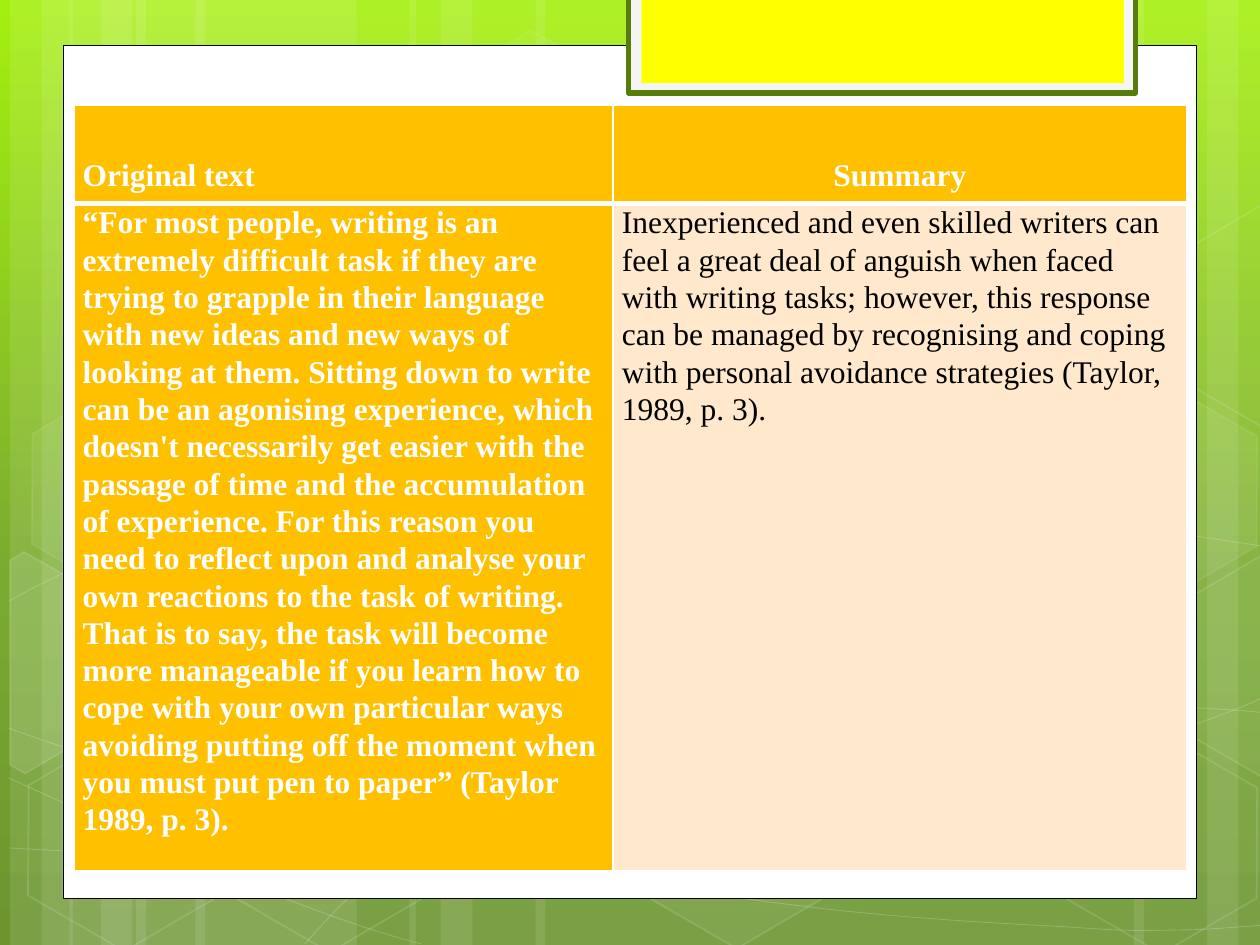
from copy import deepcopy
from lxml import etree
from pptx import Presentation
from pptx.dml.color import RGBColor
from pptx.enum.shapes import MSO_SHAPE
from pptx.enum.text import MSO_ANCHOR, PP_ALIGN
from pptx.oxml.ns import qn
from pptx.util import Cm, Pt

RECT, HEXAGON = MSO_SHAPE.RECTANGLE, MSO_SHAPE.HEXAGON
LEFT, CENTER = PP_ALIGN.LEFT, PP_ALIGN.CENTER
TOP, BOTTOM = MSO_ANCHOR.TOP, MSO_ANCHOR.BOTTOM
WHITE = RGBColor(0xFF, 0xFF, 0xFF)
BLACK = RGBColor(0, 0, 0)
AMBER = RGBColor(0xFF, 0xC0, 0x00)
PEACH = RGBColor(0xFF, 0xE8, 0xCC)
YELLOW = RGBColor(0xFF, 0xFF, 0x00)
PALE = RGBColor(0xF5, 0xF5, 0xF5)
GREEN = RGBColor(0x57, 0x7C, 0x0C)
FONT = "Times New Roman"

BACKGROUND = [(0, RGBColor(0xA5, 0xEF, 0x0E)), (0.62, RGBColor(0x79, 0xAA, 0x30)),
              (1, RGBColor(0x6C, 0x95, 0x30))]

HEADER = ["Original text", "Summary"]
BODY = [
    "“For most people, writing is an extremely difficult task if they are trying to "
    "grapple in their language with new ideas and new ways of looking at them. Sitting "
    "down to write can be an agonising experience, which doesn't necessarily get easier "
    "with the passage of time and the accumulation of experience. For this reason you "
    "need to reflect upon and analyse your own reactions to the task of writing. That is "
    "to say, the task will become more manageable if you learn how to cope with your own "
    "particular ways avoiding putting off the moment when you must put pen to paper” "
    "(Taylor 1989, p. 3).",
    "Inexperienced and even skilled writers can feel a great deal of anguish when faced "
    "with writing tasks; however, this response can be managed by recognising and coping "
    "with personal avoidance strategies (Taylor, 1989, p. 3).",
]
COL_WIDTHS = [4.28, 4.55]
ROW_HEIGHTS = [0.78, 5.3]

STRIPES = [(1.08, 1.75), (0.08, 0.5), (0.33, 0.83), (1.55, 1.75), (0.55, 0.5), (0.8, 0.83),
           (7.33, 1.75), (9.58, 0.5), (9, 0.83), (4.25, 3.08), (3.25, 0.5), (3.5, 0.83)]

CURVES = [
    [(0.07, 6.73), (0.61, 6.76), (1.15, 6.79), (1.9, 6.78), (2.65, 6.77), (3.58, 6.75),
     (4.58, 6.65), (5.58, 6.55), (7, 6.36), (7.92, 6.17), (8.83, 5.98), (9.77, 5.68),
     (10.07, 5.51)],
    [(0.07, 4.77), (0.36, 4.61), (0.65, 4.46), (1.21, 4.31), (1.78, 4.16), (2.59, 3.94),
     (3.47, 3.87), (4.36, 3.8), (5.44, 3.79), (6.54, 3.87), (7.64, 3.95), (9.47, 4.26),
     (10.07, 4.34)],
    [(0.06, 6.17), (1.27, 6.72), (2.47, 7.27), (3.34, 7.49)],
    [(0.07, 5.78), (0.38, 5.89), (0.7, 6), (1.28, 6.16), (1.86, 6.31), (2.73, 6.56),
     (3.57, 6.73), (4.4, 6.9), (5.45, 7.08), (6.28, 7.18), (7.11, 7.29), (8, 7.33),
     (8.53, 7.36), (9.05, 7.4), (9.19, 7.38), (9.45, 7.38), (9.71, 7.37), (9.89, 7.35),
     (10.07, 7.34)],
    [(2.42, 7.49), (2.6, 7.29), (2.78, 7.09), (3.02, 6.91), (3.26, 6.73), (3.6, 6.53),
     (3.88, 6.39), (4.16, 6.25), (4.33, 6.19), (4.7, 6.09), (5.06, 5.99), (5.73, 5.85),
     (6.08, 5.78), (6.44, 5.71), (6.49, 5.71), (6.8, 5.69), (7.11, 5.66), (7.6, 5.63),
     (7.94, 5.62), (8.29, 5.61), (8.86, 5.62), (8.86, 5.62), (9.08, 5.62), (9.31, 5.62),
     (9.53, 5.62), (9.71, 5.63), (9.88, 5.64), (9.97, 5.65), (10.06, 5.66), (10.03, 5.65),
     (10.06, 5.66)],
]

HEXAGONS = [(3.34, 0.36, 4, 8), (4.97, 5.89, 6, 12), (0.11, 5.91, 0, 12),
            (0.14, 3.12, 7, 8), (1.74, 5.92, 0, 12), (7.53, 4.53, 10, 12),
            (8.34, 5.93, 0, 12), (8.34, 3.14, 7, 8)]

CUT_HEXAGONS = [
    (10, [(0.08, 4.45), (0.19, 4.38), (0.96, 4.82), (0.95, 5.7), (0.2, 6.14), (0.08, 6.07)]),
    (4, [(9.26, 4.85), (10.01, 4.41), (10.09, 4.46), (10.09, 6.13), (10.02, 6.17),
         (9.26, 5.73)]),
    (0, [(9.26, 2.07), (10.01, 1.63), (10.1, 1.68), (10.09, 3.35), (10.02, 3.39),
         (9.26, 2.95)]),
]

PANELS = [(0.5, 0.36, 9, 6.77, WHITE, BLACK, 0.5), (4.99, -0.02, 4.02, 0.76, PALE, GREEN, 3),
          (5.09, -0.02, 3.83, 0.68, YELLOW, None, 0)]


def inch(v):
    return Cm(v * 2.54)


def set_alpha(parent, percent):
    if percent < 100:
        color = parent.find(qn("a:solidFill")).find(qn("a:srgbClr"))
        etree.SubElement(color, qn("a:alpha"), val=str(percent * 1000))


def style(sp, fill=None, fill_alpha=100, line=None, width=1, line_alpha=100):
    sp.shadow.inherit = False
    sp_pr = sp._element.spPr
    if fill is None or fill_alpha == 0:
        sp.fill.background()
    else:
        sp.fill.solid()
        sp.fill.fore_color.rgb = fill
        set_alpha(sp_pr, fill_alpha)
    if line is None:
        sp.line.fill.background()
    else:
        sp.line.color.rgb = line
        sp.line.width = Pt(width)
        set_alpha(sp_pr.find(qn("a:ln")), line_alpha)


def add_preset(shapes, kind, x, y, w, h):
    return shapes.add_shape(kind, inch(x), inch(y), inch(w), inch(h))


def add_outline(shapes, points, close):
    pts = [(inch(x), inch(y)) for x, y in points]
    fb = shapes.build_freeform(*pts[0])
    fb.add_line_segments(pts[1:], close=close)
    return fb.convert_to_shape()


def add_curve(shapes, points):
    sp = add_outline(shapes, points, False)
    segments = list(sp._element.iter(qn("a:lnTo")))
    for i in range(0, len(segments), 3):
        curve = etree.Element(qn("a:cubicBezTo"))
        segments[i].addprevious(curve)
        for segment in segments[i:i + 3]:
            curve.append(segment[0])
            segment.getparent().remove(segment)
    return sp


def set_borders(cell, widths):
    tc_pr = cell._tc.get_or_add_tcPr()
    for i, (side, width) in enumerate(zip("LRTB", widths)):
        ln = etree.Element(qn(f"a:ln{side}"), w=str(Pt(width)))
        fill = etree.SubElement(ln, qn("a:solidFill"))
        etree.SubElement(fill, qn("a:srgbClr"), val=str(WHITE))
        tc_pr.insert(i, ln)


def fill_cell(cell, text, fill, color, bold, align, anchor, borders):
    cell.fill.solid()
    cell.fill.fore_color.rgb = fill
    cell.margin_left = cell.margin_right = inch(0.07)
    cell.margin_top = 0
    cell.margin_bottom = inch(0.08) if anchor == BOTTOM else 0
    cell.vertical_anchor = anchor
    set_borders(cell, borders)
    p = cell.text_frame.paragraphs[0]
    p.alignment, p.line_spacing, p.space_after = align, 1.07, Pt(8)
    r = p.add_run()
    r.text = text
    r.font.name, r.font.size, r.font.bold = FONT, Pt(18), bold
    r.font.color.rgb = color


def add_background(s):
    fill = s.background.fill
    fill.gradient()
    fill.gradient_angle = 270
    stops = s._element.find(".//" + qn("a:gsLst"))
    stops.append(deepcopy(stops[0]))
    for stop, (position, color) in zip(fill.gradient_stops, BACKGROUND):
        stop.position, stop.color.rgb = position, color


def add_decoration(s):
    shapes = s.shapes.add_group_shape().shapes
    for x, w in STRIPES:
        style(add_preset(shapes, RECT, x, 0, w, 7.5), WHITE, 10)
    for points in CURVES:
        style(add_curve(shapes, points), line=WHITE, width=0.5, line_alpha=20)
    for x, y, alpha, line_alpha in HEXAGONS:
        sp = add_preset(shapes, HEXAGON, x, y, 1.75, 1.52)
        sp.adjustments[0] = 0.285
        sp.rotation = 30
        style(sp, WHITE, alpha, WHITE, 1, line_alpha)
    for alpha, points in CUT_HEXAGONS:
        style(add_outline(shapes, points, True), WHITE, alpha, WHITE, 1, 12)


def add_panels(s):
    for x, y, w, h, fill, line, width in PANELS:
        style(add_preset(s.shapes, RECT, x, y, w, h), fill, line=line, width=width)


def add_comparison(s):
    table = s.shapes.add_table(2, 2, Cm(1.49), Cm(2.12), inch(sum(COL_WIDTHS)),
                               inch(sum(ROW_HEIGHTS))).table
    for row, h in zip(table.rows, ROW_HEIGHTS):
        row.height = inch(h)
    for i, w in enumerate(COL_WIDTHS):
        table.columns[i].width = inch(w)
        first = i == 0
        fill_cell(table.cell(0, i), HEADER[i], AMBER, WHITE, True,
                  LEFT if first else CENTER, BOTTOM, (1, 1, 1, 3))
        fill_cell(table.cell(1, i), BODY[i], AMBER if first else PEACH,
                  WHITE if first else BLACK, first, LEFT, TOP, (1, 1, 3, 1))


prs = Presentation()
prs.slide_width, prs.slide_height = inch(10), inch(7.5)
s = prs.slides.add_slide(prs.slide_layouts[6])
add_background(s)
add_decoration(s)
add_panels(s)
add_comparison(s)
prs.save("out.pptx")
